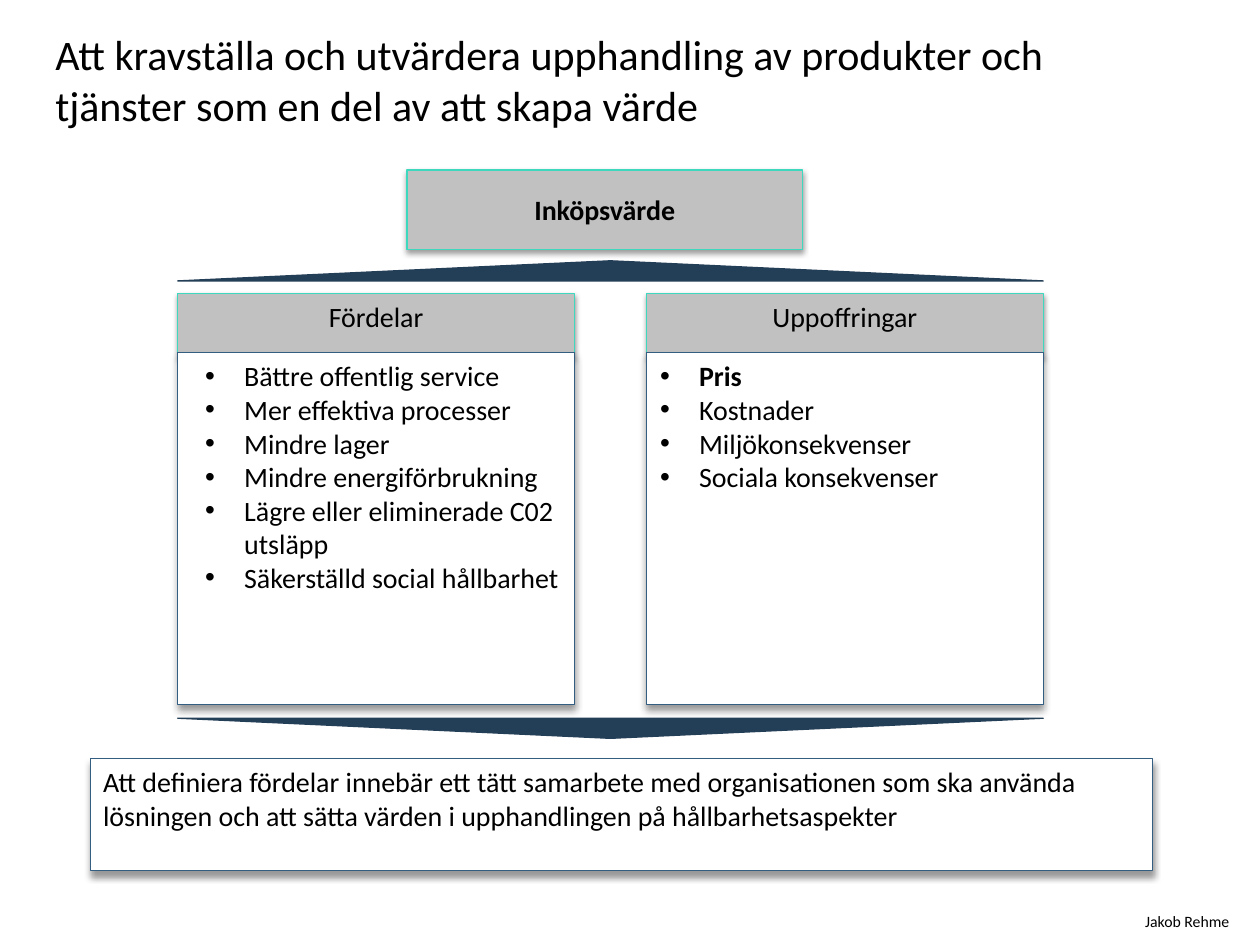
from lxml import etree
from pptx import Presentation
from pptx.dml.color import RGBColor
from pptx.enum.shapes import MSO_SHAPE as Shape
from pptx.enum.text import MSO_ANCHOR as Anchor, MSO_AUTO_SIZE as AutoSize, PP_ALIGN as Align
from pptx.oxml.ns import qn
from pptx.util import Inches, Pt

BLACK = RGBColor(0x00, 0x00, 0x00)
WHITE = RGBColor(0xFF, 0xFF, 0xFF)
GREY = RGBColor(0xC1, 0xC1, 0xC1)
MINT = RGBColor(0x3E, 0xD8, 0xBE)
NAVY = RGBColor(0x23, 0x3E, 0x57)
BLUE = RGBColor(0x34, 0x5D, 0x82)

# Shadows: opacity in percent, blur and distance in points
HEADER_SHADOW = (38, 3.1, 1.6)
PANEL_SHADOW = (40, 4, 3)

# Grid: two equal columns, with rows measured from the top
COLUMN_LEFTS = (1.41, 5.13)
COLUMN_WIDTH = 3.15
GRID_LEFT = COLUMN_LEFTS[0]
GRID_WIDTH = COLUMN_LEFTS[1] + COLUMN_WIDTH - GRID_LEFT
HEADER_TOP, HEADER_HEIGHT = 2.33, 0.5
PANEL_TOP, PANEL_HEIGHT = 2.8, 2.79
ARROW_HEIGHT = 0.16
BULLET_INDENT = 0.31

deck = Presentation()
deck.slide_width, deck.slide_height = Inches(10), Inches(7.5)
page = deck.slides.add_slide(deck.slide_layouts[6])


def add_block(kind, area, fill, line, shadow=None):
    block = page.shapes.add_shape(kind, *map(Inches, area))
    block.fill.solid()
    block.fill.fore_color.rgb = fill
    block.line.color.rgb = line
    block.line.width = Pt(0.75)
    block.shadow.inherit = False
    if shadow:
        opacity, blur, distance = shadow
        effects = block._element.spPr.find(qn("a:effectLst"))
        outer = etree.SubElement(
            effects, qn("a:outerShdw"), blurRad=str(Pt(blur)), dist=str(Pt(distance)),
            dir="5400000", algn="ctr", rotWithShape="0")
        color = etree.SubElement(outer, qn("a:srgbClr"), val="000000")
        etree.SubElement(color, qn("a:alpha"), val=str(opacity * 1000))
    return block


def write(box, lines, size=16, align=Align.LEFT, bullets=False):
    frame = box.text_frame
    frame.word_wrap = True
    frame.text = "\n".join(lines)
    for para in frame.paragraphs:
        if bullets:
            props = para._p.get_or_add_pPr()
            props.set("marL", str(Inches(BULLET_INDENT)))
            props.set("indent", str(-Inches(BULLET_INDENT)))
            etree.SubElement(props, qn("a:buFont"), typeface="Arial")
            etree.SubElement(props, qn("a:buChar"), char="•")
        para.alignment = align
        for span in para.runs:
            span.font.name = "Calibri"
            span.font.size = Pt(size)
            span.font.color.rgb = BLACK
    return frame


# Author and title
author = page.shapes.add_textbox(*map(Inches, (8.99, 7.19, 0.97, 0.25)))
write(author, ["Jakob Rehme"], size=9).word_wrap = False
title = page.shapes.add_textbox(*map(Inches, (0.34, 0.18, 8.19, 1.08)))
write(title, ["Att kravställa och utvärdera upphandling av produkter och "
              "tjänster som en del av att skapa värde"], size=24)

# Purchase value on top
value = add_block(Shape.RECTANGLE, (3.23, 1.35, 3.14, 0.63), GREY, MINT, HEADER_SHADOW)
value_frame = write(value, ["Inköpsvärde"], align=Align.CENTER)
value_frame.vertical_anchor = Anchor.MIDDLE
value_frame.paragraphs[0].runs[0].font.bold = True

# Flat arrows above and below the columns
for top, rotation in ((2.07, 0), (5.7, 180)):
    arrow = add_block(Shape.ISOSCELES_TRIANGLE,
                      (GRID_LEFT, top, GRID_WIDTH, ARROW_HEIGHT), NAVY, NAVY)
    arrow.rotation = rotation

# Benefits and sacrifices: header, panel, bullet list
columns = (
    ("Fördelar", 0.12, ["Bättre offentlig service", "Mer effektiva processer",
                        "Mindre lager", "Mindre energiförbrukning",
                        "Lägre eller eliminerade C02 utsläpp",
                        "Säkerställd social hållbarhet"]),
    ("Uppoffringar", 0.01, ["Pris", "Kostnader", "Miljökonsekvenser",
                            "Sociala konsekvenser"]),
)
for left, (heading, inset, points) in zip(COLUMN_LEFTS, columns):
    header = add_block(Shape.RECTANGLE, (left, HEADER_TOP, COLUMN_WIDTH, HEADER_HEIGHT),
                       GREY, MINT, HEADER_SHADOW)
    write(header, [heading], align=Align.CENTER).vertical_anchor = Anchor.TOP
    add_block(Shape.RECTANGLE, (left, PANEL_TOP, COLUMN_WIDTH, PANEL_HEIGHT),
              WHITE, BLUE, PANEL_SHADOW)
    listing = page.shapes.add_textbox(
        *map(Inches, (left + inset, PANEL_TOP, COLUMN_WIDTH, 2.05)))
    list_frame = write(listing, points, bullets=True)
    for span in list_frame.paragraphs[0].runs:
        span.font.bold = span.text == "Pris"

# Conclusion
add_block(Shape.RECTANGLE, (0.72, 6.02, 8.43, 0.89), WHITE, BLUE, PANEL_SHADOW)
conclusion = page.shapes.add_textbox(*map(Inches, (0.72, 6.02, 8.43, 0.64)))
write(conclusion, ["Att definiera fördelar innebär ett tätt samarbete med organisationen "
                   "som ska använda lösningen och att sätta värden i upphandlingen på "
                   "hållbarhetsaspekter"]).auto_size = AutoSize.SHAPE_TO_FIT_TEXT

deck.save("out.pptx")
